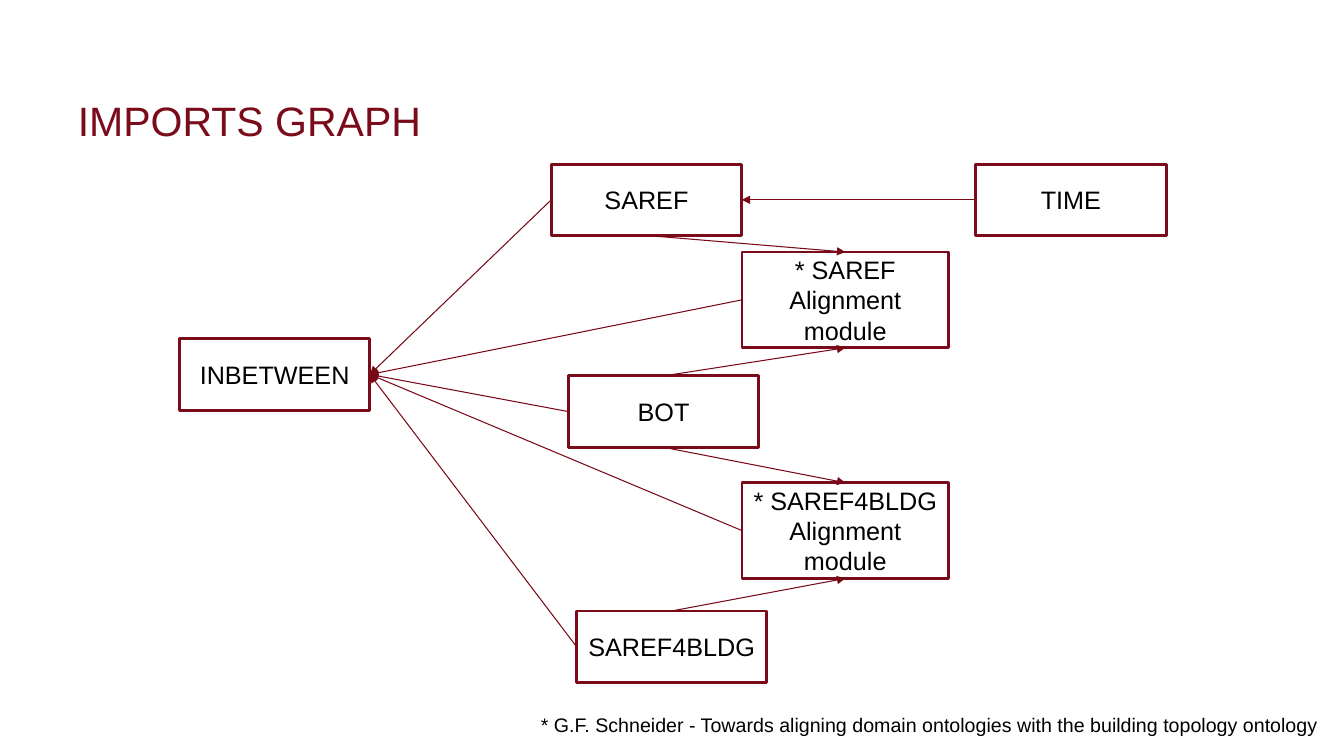
from lxml.etree import SubElement as Sub
from pptx import Presentation
from pptx.dml.color import RGBColor as Rgb
from pptx.enum.shapes import MSO_CONNECTOR as Link, MSO_SHAPE as Kind
from pptx.enum.text import MSO_ANCHOR as Anchor, MSO_AUTO_SIZE as Fit, PP_ALIGN as Align
from pptx.oxml.ns import qn
from pptx.util import Pt

TOP, LEFT, BASE, RIGHT = range(4)
SMALL, LARGE = (136, 51), (147.6, 68.4)
BOXES = {
    "bot": ("BOT", 406, 268.5, SMALL),
    "saref": ("SAREF", 393.8, 117.2, SMALL),
    "bldg": ("SAREF4BLDG", 411.8, 436.4, SMALL),
    "hub": ("INBETWEEN", 128.2, 242, SMALL),
    "time": ("TIME", 697, 117.2, SMALL),
    "align": ("* SAREF\nAlignment module", 530, 180, LARGE),
    "align4": ("* SAREF4BLDG\nAlignment module", 530, 344.8, LARGE),
}
ARROWS = [
    ("saref", LEFT, "hub", RIGHT),
    ("bot", LEFT, "hub", RIGHT),
    ("bldg", LEFT, "hub", RIGHT),
    ("align", LEFT, "hub", RIGHT),
    ("align4", LEFT, "hub", RIGHT),
    ("bot", BASE, "align4", TOP),
    ("bldg", TOP, "align4", BASE),
    ("saref", BASE, "align", TOP),
    ("bot", TOP, "align", BASE),
    ("time", LEFT, "saref", RIGHT),
]


def color(code):
    return Rgb.from_string(code)


def write(shape, text, size=18, ink="000000", align=Align.LEFT, anchor=Anchor.TOP, inset=None):
    frame = shape.text_frame
    frame.text = text
    frame.word_wrap = True
    frame.vertical_anchor = anchor
    if inset is not None:
        frame.margin_left = frame.margin_right = Pt(inset)
        frame.margin_top = frame.margin_bottom = Pt(inset)
    for para in frame.paragraphs:
        para.alignment = align
        for run in para.runs:
            run.font.name = "Arial"
            run.font.size = Pt(size)
            run.font.color.rgb = color(ink)


def place(shape, left, top, width, height):
    shape.left, shape.top = Pt(left), Pt(top)
    shape.width, shape.height = Pt(width), Pt(height)


def add_box(slide, text, left, top, size):
    box = slide.shapes.add_shape(Kind.RECTANGLE, Pt(left), Pt(top), *map(Pt, size))
    box.shadow.inherit = False
    box.fill.solid()
    box.fill.fore_color.rgb = color("FFFFFF")
    box.line.color.rgb = color("790B1A")
    box.line.width = Pt(2)
    write(box, text, align=Align.CENTER, anchor=Anchor.MIDDLE)
    return box


def add_arrow(slide, start, out, end, into):
    """Join two boxes with an arrow that points at the second."""
    arrow = slide.shapes.add_connector(Link.STRAIGHT, 0, 0, 0, 0)
    arrow.begin_connect(start, out)
    arrow.end_connect(end, into)
    arrow.line.color.rgb = color("790817")
    arrow.line.width = Pt(0.75)
    Sub(arrow.line._get_or_add_ln(), qn("a:tailEnd"), type="triangle")
    Sub(arrow._element.spPr, qn("a:effectLst"))


def main():
    deck = Presentation()
    deck.slide_width, deck.slide_height = Pt(960), Pt(540)
    slide = deck.slides.add_slide(deck.slide_layouts[5])

    title = slide.shapes.title
    place(title, 55.6, 28, 658.8, 75.6)
    write(title, "IMPORTS GRAPH", size=29.3, ink="790B1A", anchor=Anchor.BOTTOM, inset=0)
    title.text_frame.auto_size = Fit.NONE

    boxes = {name: add_box(slide, *data) for name, data in BOXES.items()}
    for start, out, end, into in ARROWS:
        add_arrow(slide, boxes[start], out, boxes[end], into)

    note = slide.shapes.add_textbox(Pt(379.2), Pt(506), Pt(580.8), Pt(24.2))
    write(note, "* G.F. Schneider - Towards aligning domain ontologies "
                "with the building topology ontology", size=14)
    note.text_frame.auto_size = Fit.SHAPE_TO_FIT_TEXT

    deck.save("out.pptx")


if __name__ == "__main__":
    main()
